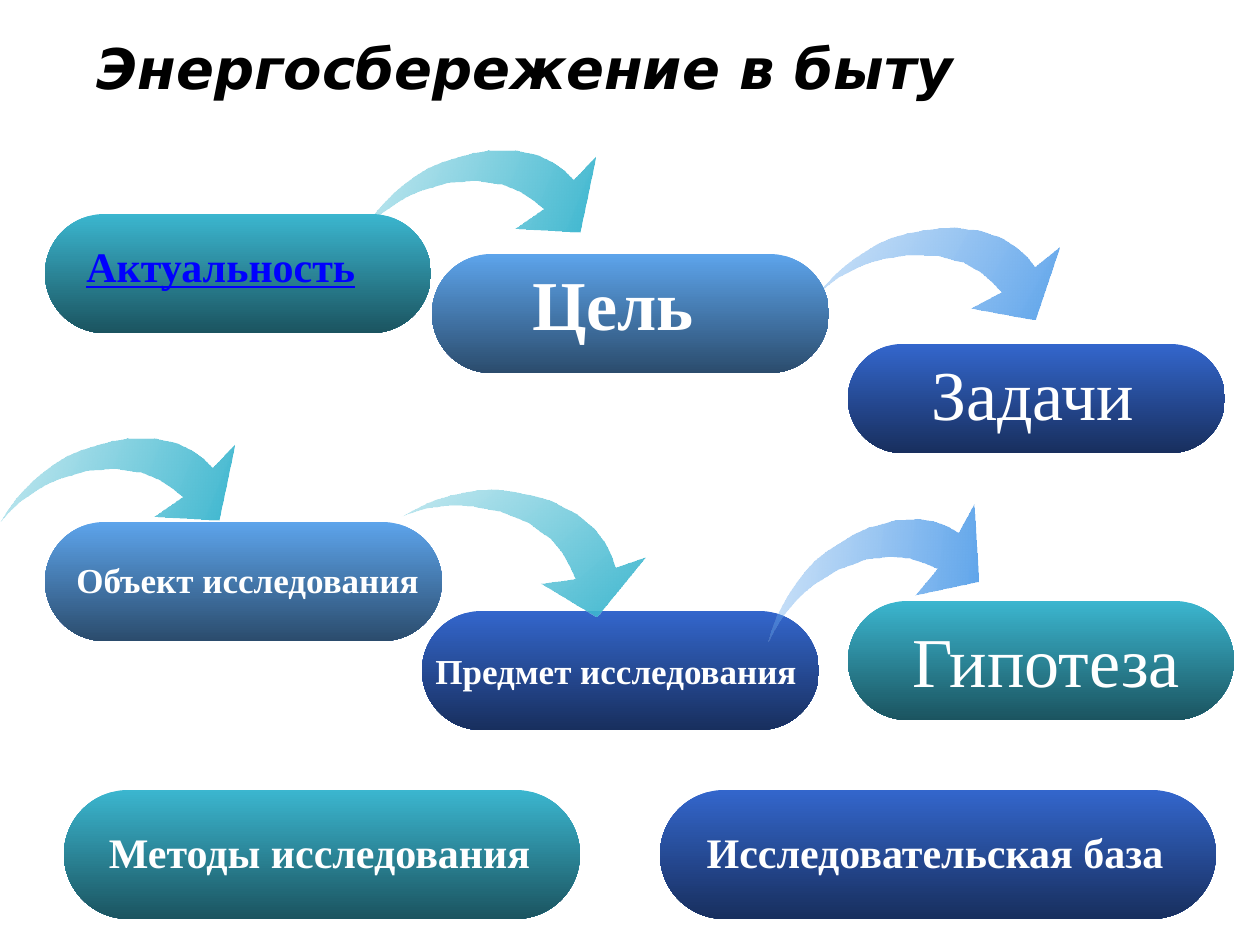
import pptx
import pptx.dml.color
import pptx.enum.shapes
import pptx.enum.text
import pptx.util
from lxml import etree

PX = 914400 // 126
SERIF = "Times New Roman"
COLORS = {
    "teal": "3BB6CF", "teal dark": "1B5460", "teal pale": "4DBDD3",
    "sky": "5DA4EB", "sky dark": "2B4C6D", "sky pale": "6CACED",
    "navy": "3366CC", "navy dark": "182F5E",
    "white": "FFFFFF", "black": "000000", "link": "0000FF",
}
TITLE = ("Энергосбережение в быту", (84, 0, 1062, 135))

# left, top, rotation in degrees, colour
ARROWS_BEHIND = [(384, 118, 22.2, "teal"), (844, 194, 29.2, "sky")]
ARROWS_IN_FRONT = [(23, 406, 22.2, "teal"), (427, 462, 49.7, "teal"),
                   (777, 494, 6.8, "sky")]
ARROW_OUTLINE = [
    (0, 160), (4, 149), (10, 135), (16, 126), (22, 117), (29, 108), (39, 98),
    (49, 90), (60, 81), (74, 74), (87, 67), (101, 64), (112, 61), (123, 61),
    (131, 61), (146, 64), (159, 68), (140, 97), (202, 76), (188, 0),
    (176, 30), (164, 25), (151, 22), (133, 21), (122, 23), (111, 25),
    (99, 30), (86, 35), (73, 43), (60, 53), (48, 63), (37, 74), (28, 86),
    (21, 98), (15, 109), (10, 121), (6, 132), (2, 148),
]

# text, pill area, colour, label area (None: text inside the pill), text format
STEPS = [
    ("Задачи", (848, 344, 377, 109), "navy", (917, 344, 231, 97),
     dict(size=40, align="CENTER")),
    ("Актуальность", (45, 214, 386, 119), "teal", (74, 234, 318, 63),
     dict(size=24, bold=True, underline=True, color="link", anchor="MIDDLE",
          wrap=True)),
    ("Цель", (432, 254, 397, 119), "sky", (520, 254, 189, 97),
     dict(size=40, bold=True, anchor="MIDDLE")),
    ("Предмет исследования ", (422, 611, 397, 119), "navy", None,
     dict(size=20, bold=True, align="CENTER", anchor="MIDDLE", grow=False)),
    ("Объект исследования", (45, 522, 397, 119), "sky", (64, 552, 391, 55),
     dict(size=20, bold=True, anchor="MIDDLE")),
    ("Гипотеза", (848, 601, 386, 119), "teal", (898, 611, 296, 97),
     dict(size=40, align="CENTER")),
]
RESOURCES = [
    ("Методы исследования", (64, 790, 516, 129), "teal", (94, 820, 451, 63),
     dict(size=24, bold=True, align="CENTER")),
    ("Исследовательская база", (660, 790, 556, 129), "navy",
     (692, 820, 486, 63), dict(size=24, bold=True, align="CENTER")),
]


def emu(lengths):
    return [length * PX for length in lengths]


def rgb(name):
    return pptx.dml.color.RGBColor.from_string(COLORS[name])


def write(shape, text, size, font=SERIF, color="white", bold=False,
          italic=False, underline=False, align="LEFT", anchor="TOP",
          wrap=False, grow=True):
    frame = shape.text_frame
    frame.word_wrap = wrap
    frame.vertical_anchor = getattr(pptx.enum.text.MSO_ANCHOR, anchor)
    sizing = pptx.enum.text.MSO_AUTO_SIZE
    frame.auto_size = sizing.SHAPE_TO_FIT_TEXT if grow else sizing.NONE
    para = frame.paragraphs[0]
    para.alignment = getattr(pptx.enum.text.PP_ALIGN, align)
    span = para.add_run()
    span.text = text
    span.font.name = font
    span.font.size = pptx.util.Pt(size)
    span.font.bold, span.font.italic = bold, italic
    span.font.underline = underline
    span.font.color.rgb = rgb(color)


def paint(shape, start, end, angle, opacity=None):
    """Fill with a gradient; opacity (percent) applies to its start."""
    shape.shadow.inherit = False
    shape.line.fill.background()
    shape.fill.gradient()
    shape.fill.gradient_angle = angle
    for stop, color in zip(shape.fill.gradient_stops, (start, end)):
        stop.color.rgb = rgb(color)
    for stop, position in zip(shape.fill.gradient_stops, (0, 1)):
        stop.position = position
    if opacity is not None:
        color = shape._element.spPr.find(".//{*}gs/{*}srgbClr")
        namespace = etree.QName(color).namespace
        alpha = etree.SubElement(color, f"{{{namespace}}}alpha")
        alpha.set("val", str(opacity * 1000))


def add_arrow(page, left, top, rotation, color):
    builder = page.shapes.build_freeform(*ARROW_OUTLINE[0], scale=PX)
    builder.add_line_segments(ARROW_OUTLINE[1:], close=True)
    arrow = builder.convert_to_shape(left * PX, top * PX)
    arrow.rotation = rotation
    paint(arrow, f"{color} pale", color, 0, opacity=32)


def add_pill(page, text, area, color, label_area, style):
    shapes = page.shapes.add_group_shape().shapes if label_area else page.shapes
    pill = shapes.add_shape(
        pptx.enum.shapes.MSO_SHAPE.ROUNDED_RECTANGLE, *emu(area))
    pill.adjustments[0] = 0.5
    paint(pill, color, f"{color} dark", 270)
    label = shapes.add_textbox(*emu(label_area)) if label_area else pill
    write(label, text, **style)


def main():
    deck = pptx.Presentation()
    deck.slide_width, deck.slide_height = emu((1260, 945))
    page = deck.slides.add_slide(deck.slide_layouts[5])

    text, area = TITLE
    title = page.shapes.title
    title.left, title.top, title.width, title.height = emu(area)
    write(title, text, size=32, font="DejaVu Sans", color="black", bold=True,
          italic=True, anchor="MIDDLE", wrap=True, grow=False)

    for arrow in ARROWS_BEHIND:
        add_arrow(page, *arrow)
    for step in STEPS:
        add_pill(page, *step)
    for arrow in ARROWS_IN_FRONT:
        add_arrow(page, *arrow)
    for resource in RESOURCES:
        add_pill(page, *resource)
    deck.save("out.pptx")


if __name__ == "__main__":
    main()
